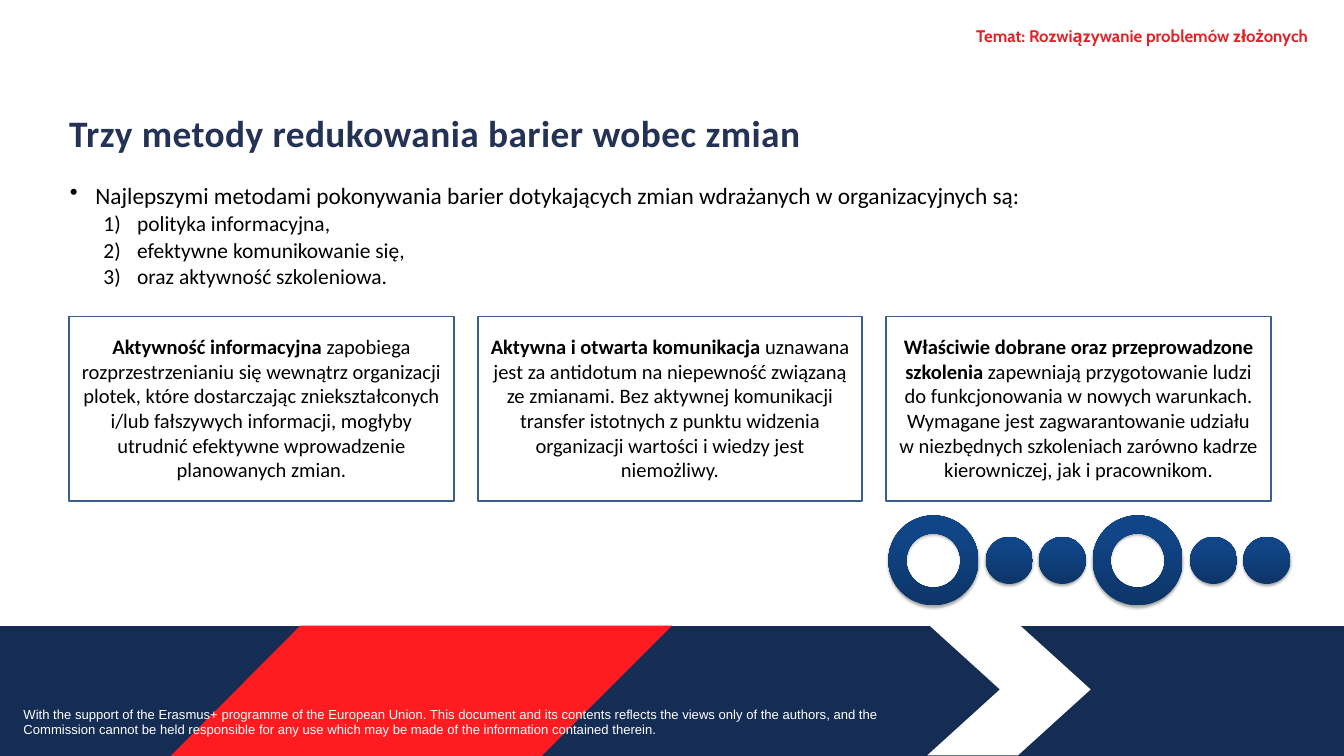
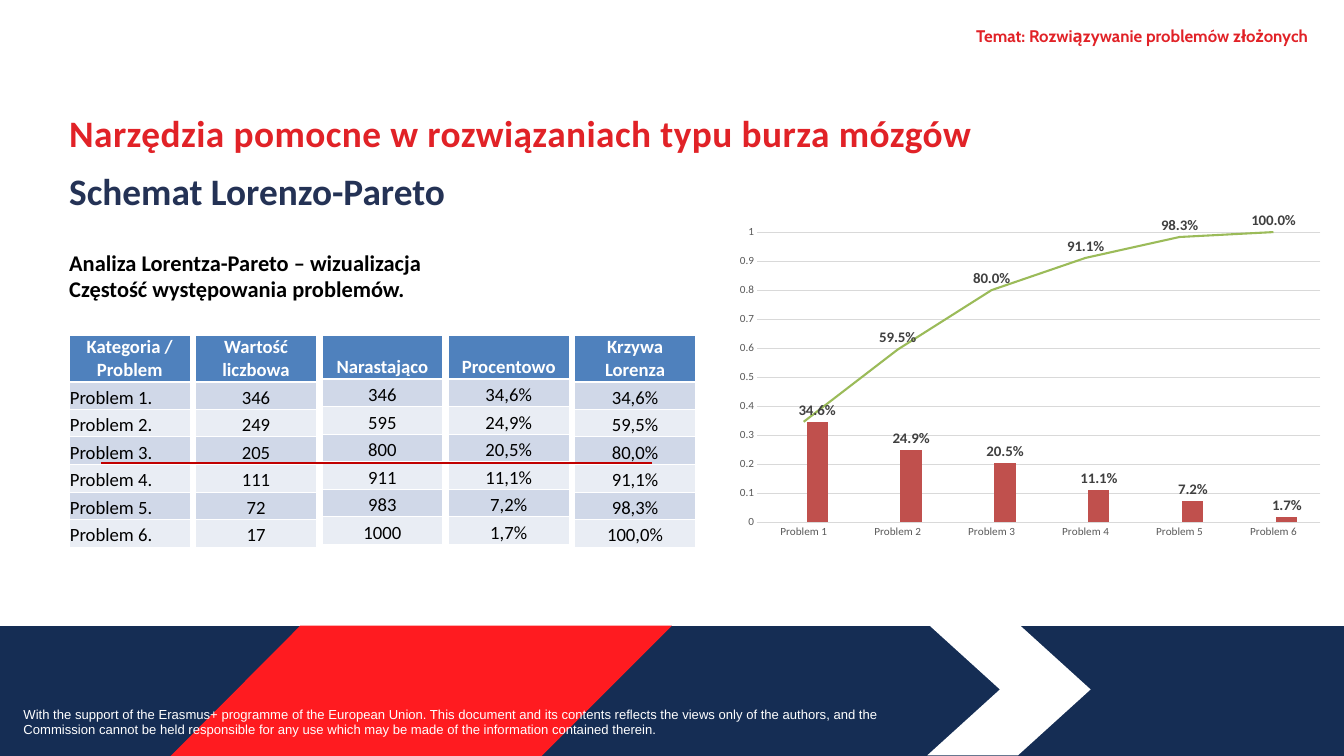
from copy import deepcopy

from lxml import etree
from pptx import Presentation
from pptx.chart.data import CategoryChartData
from pptx.dml.color import RGBColor
from pptx.enum.chart import XL_CHART_TYPE, XL_LABEL_POSITION, XL_MARKER_STYLE, XL_TICK_MARK
from pptx.enum.shapes import MSO_CONNECTOR, MSO_SHAPE
from pptx.enum.text import MSO_ANCHOR, MSO_AUTO_SIZE, PP_ALIGN
from pptx.oxml import parse_xml
from pptx.oxml.ns import nsdecls, qn
from pptx.util import Inches, Pt

LEFT, CENTER, RIGHT = PP_ALIGN.LEFT, PP_ALIGN.CENTER, PP_ALIGN.RIGHT
TOP, MIDDLE, BOTTOM = MSO_ANCHOR.TOP, MSO_ANCHOR.MIDDLE, MSO_ANCHOR.BOTTOM
NO_TICKS = XL_TICK_MARK.NONE

WHITE = RGBColor(0xFF, 0xFF, 0xFF)
BLACK = RGBColor(0, 0, 0)
BAND_NAVY = RGBColor(0x15, 0x2D, 0x54)
BAND_RED = RGBColor(0xFF, 0x1B, 0x20)
TITLE_NAVY = RGBColor(0x24, 0x32, 0x55)
TITLE_RED = RGBColor(0xE1, 0x22, 0x27)
BOX_LINE = RGBColor(0x3A, 0x5F, 0x8C)
BEAD_DARK = RGBColor(0x0D, 0x35, 0x68)
BEAD_LIGHT = RGBColor(0x10, 0x45, 0x87)
HEADER_BLUE = RGBColor(0x4F, 0x81, 0xBD)
ROW_FILLS = (RGBColor(0xD0, 0xD8, 0xE8), RGBColor(0xE9, 0xED, 0xF4))
CUT_RED = RGBColor(0xC0, 0, 0)
BAR_RED = RGBColor(0xC0, 0x50, 0x4D)
CURVE_GREEN = RGBColor(0x9B, 0xBB, 0x59)
GRID_GREY = RGBColor(0xD9, 0xD9, 0xD9)
AXIS_GREY = RGBColor(0x59, 0x59, 0x59)
LABEL_GREY = RGBColor(0x40, 0x40, 0x40)

MARGIN = 1.03
TOPIC = "Temat: Rozwiązywanie problemów złożonych "
DISCLAIMER = (
    "With the support of the Erasmus+ programme of the European Union. This document and its "
    "contents reflects the views only of the authors, and the Commission cannot be held "
    "responsible for any use which may be made of the information contained therein."
)
BANDS = (
    (BAND_NAVY, ((0, 9.31), (20, 9.31), (20, 11.25), (0, 11.25))),
    (WHITE, ((13.8, 9.28), (15.15, 9.28), (16.23, 10.26), (15.15, 11.24),
             (13.8, 11.24), (14.88, 10.26))),
    (BAND_RED, ((4.47, 9.31), (10, 9.31), (8.06, 11.25), (2.54, 11.25))),
)
METHODS = (
    ("Aktywność informacyjna ",
     "zapobiega rozprzestrzenianiu się wewnątrz organizacji plotek, które dostarczając "
     "zniekształconych i/lub fałszywych informacji, mogłyby utrudnić efektywne wprowadzenie "
     "planowanych zmian."),
    ("Aktywna i otwarta komunikacja ",
     "uznawana jest za antidotum na niepewność związaną ze zmianami. Bez aktywnej komunikacji "
     "transfer istotnych z punktu widzenia organizacji wartości i wiedzy jest niemożliwy."),
    ("Właściwie dobrane oraz przeprowadzone szkolenia ",
     "zapewniają przygotowanie ludzi do funkcjonowania w nowych warunkach.\n"
     "Wymagane jest zagwarantowanie udziału\n"
     "w niezbędnych szkoleniach zarówno kadrze kierowniczej, jak i pracownikom."),
)
PARETO_COLUMNS = (
    ("Kategoria / Problem", [f"Problem {number}." for number in range(1, 7)]),
    ("Wartość liczbowa", ["346", "249", "205", "111", "72", "17"]),
    ("Narastająco", ["346", "595", "800", "911", "983", "1000"]),
    ("Procentowo", ["34,6%", "24,9%", "20,5%", "11,1%", "7,2%", "1,7%"]),
    ("Krzywa Lorenza", ["34,6%", "59,5%", "80,0%", "91,1%", "98,3%", "100,0%"]),
)
SHARES = (0.346, 0.249, 0.205, 0.111, 0.072, 0.017)
LORENZ_CURVE = (0.346, 0.595, 0.8, 0.911, 0.983, 1)


def set_values(target, values):
    for name, value in values.items():
        setattr(target, name, value)


def set_font(font, size, color, bold=False, name="Calibri"):
    set_values(font, {"size": Pt(size), "bold": bold, "name": name})
    font.color.rgb = color


def set_line(line, color, width):
    line.color.rgb = color
    line.width = Pt(width)


def set_frame(frame, anchor=TOP, margins=(0, 0, 0, 0)):
    """Margins are left, top, right and bottom, in inches."""
    set_values(frame, {"word_wrap": True, "auto_size": MSO_AUTO_SIZE.NONE,
                       "vertical_anchor": anchor})
    for side, margin in zip(("left", "top", "right", "bottom"), margins):
        setattr(frame, f"margin_{side}", Inches(margin))


def add_run(paragraph, text, *font):
    """Add the text as runs, with a line break at each newline."""
    for number, line in enumerate(text.split("\n")):
        if number:
            paragraph.add_line_break()
        run = paragraph.add_run()
        run.text = line
        set_font(run.font, *font)


def next_paragraph(frame):
    first = frame.paragraphs[0]
    return frame.add_paragraph() if first.runs else first


def add_text(slide, place, lines, *font, align=LEFT, margins=(0, 0, 0, 0)):
    frame = slide.shapes.add_textbox(*map(Inches, place)).text_frame
    set_frame(frame, margins=margins)
    for line in lines:
        paragraph = next_paragraph(frame)
        paragraph.alignment = align
        add_run(paragraph, line, *font)
    return frame


def add_bands(layout, slide):
    """Draw the bottom bands and hand them over to the shared layout."""
    for color, points in BANDS:
        corners = [(Inches(x), Inches(y)) for x, y in points]
        builder = slide.shapes.build_freeform(*corners[0], scale=1)
        builder.add_line_segments(corners[1:], close=True)
        band = builder.convert_to_shape()
        band.shadow.inherit = False
        band.fill.solid()
        band.fill.fore_color.rgb = color
        band.line.fill.background()
        layout.shapes.element.append(band.element)


def add_titled_slide(presentation, layout, titles):
    slide = presentation.slides.add_slide(layout)
    title = slide.shapes.title
    set_values(title, {"left": Inches(MARGIN), "top": Inches(1.62), "width": Inches(18.14),
                       "height": Inches(0.75 if len(titles) == 1 else 1.65)})
    frame = title.text_frame
    set_frame(frame, margins=(0, 0.02, 0, 0))
    for text, color in titles:
        paragraph = next_paragraph(frame)
        set_values(paragraph, {"alignment": LEFT, "space_before": Pt(14)})
        add_run(paragraph, text, 40, color, True)
    first = frame.paragraphs[0]
    first.space_before = Pt(1.1)
    first.runs[0]._r.get_or_add_rPr().set("spc", "50")
    add_text(slide, (0.25, 10.46, 13.75, 0.57), [DISCLAIMER], 14, WHITE, False, "Arial",
             margins=(0.1, 0.05, 0.1, 0.05))
    add_text(slide, (9, 0.37, 10.52, 0.32), [TOPIC], 18, TITLE_RED, True, "Cabin",
             align=RIGHT, margins=(0, 0.01, 0, 0))
    return slide


def add_bullet(paragraph, margin, hang, tag, **attributes):
    properties = paragraph._p.get_or_add_pPr()
    properties.set("marL", str(Inches(margin)))
    properties.set("indent", str(-Inches(hang)))
    etree.SubElement(properties, qn(tag), attributes)


def add_method_list(slide):
    frame = add_text(slide, (MARGIN, 2.69, 15.81, 1.75), [
        "Najlepszymi metodami pokonywania barier dotykających zmian wdrażanych "
        "w organizacyjnych są:"], 25, BLACK)
    add_bullet(frame.paragraphs[0], 0.39, 0.38, "a:buChar", char="•")
    for method in ("polityka informacyjna,", "efektywne komunikowanie się,",
                   "oraz aktywność szkoleniowa."):
        paragraph = frame.add_paragraph()
        set_values(paragraph, {"level": 1, "space_before": Pt(1.1)})
        add_run(paragraph, method, 23, BLACK)
        add_bullet(paragraph, 1.01, 0.5, "a:buAutoNum", type="arabicParenR")


def add_method_box(slide, left, heading, description):
    box = slide.shapes.add_shape(MSO_SHAPE.FLOWCHART_PROCESS,
                                 *map(Inches, (left, 4.71, 5.72, 2.75)))
    box.shadow.inherit = False
    box.fill.background()
    set_line(box.line, BOX_LINE, 2)
    set_frame(box.text_frame, TOP, (0.1, 0.26, 0.1, 0.05))
    paragraph = box.text_frame.paragraphs[0]
    paragraph.alignment = CENTER
    add_run(paragraph, heading, 22, BLACK, True)
    add_run(paragraph, description, 22, BLACK)


def add_bead(group, kind, left, top, size):
    bead = group.shapes.add_shape(kind, *map(Inches, (left, top, size, size)))
    if kind == MSO_SHAPE.DONUT:
        bead.adjustments[0] = 0.2
    bead.line.fill.background()
    bead.fill.gradient()
    bead.fill.gradient_angle = 90
    for stop, color, position in zip(bead.fill.gradient_stops, (BEAD_DARK, BEAD_LIGHT), (0, 0.8)):
        stop.color.rgb = color
        stop.position = position
    bead.shadow.inherit = False
    bead.element.spPr.find(qn("a:effectLst")).append(parse_xml(
        f'<a:outerShdw {nsdecls("a")} blurRad="{Pt(3.1)}" dist="{Pt(1.8)}" dir="5400000" '
        'rotWithShape="0"><a:srgbClr val="000000"><a:alpha val="35000"/></a:srgbClr>'
        '</a:outerShdw>'))


def add_bead_chain(slide):
    group = slide.shapes.add_group_shape()
    for left in (13.22, 16.26):
        add_bead(group, MSO_SHAPE.DONUT, left, 7.67, 1.34)
        for offset in (1.45, 2.24):
            add_bead(group, MSO_SHAPE.OVAL, left + offset, 7.99, 0.7)


def add_cell_borders(cell, bottom_width):
    properties = cell._tc.get_or_add_tcPr()
    for side, width in (("L", 1), ("R", 1), ("T", 1), ("B", bottom_width)):
        properties.append(parse_xml(
            f'<a:ln{side} {nsdecls("a")} w="{Pt(width)}"><a:solidFill>'
            f'<a:srgbClr val="{WHITE}"/></a:solidFill></a:ln{side}>'))


def fill_cell(cell, text, fill, color, is_header, align, anchor):
    add_cell_borders(cell, 3 if is_header else 1)
    cell.fill.solid()
    cell.fill.fore_color.rgb = fill
    set_values(cell, {"vertical_anchor": anchor, "margin_left": Inches(0.01),
                      "margin_right": Inches(0.01), "margin_top": Inches(0.01),
                      "margin_bottom": 0})
    paragraph = cell.text_frame.paragraphs[0]
    paragraph.alignment = align
    add_run(paragraph, text, 20, color, is_header)


def add_column_table(slide, left, header, values, align):
    frame = slide.shapes.add_table(len(values) + 1, 1, *map(Inches, (left, 4.99, 1.8, 3.11)))
    table = frame.table
    table.horz_banding = False
    for number, row in enumerate(table.rows):
        row.height = Inches(0.41 if number else 0.65)
    header_anchor = MIDDLE if " " in header else BOTTOM
    fill_cell(table.cell(0, 0), header, HEADER_BLUE, WHITE, True, CENTER, header_anchor)
    for number, value in enumerate(values):
        fill_cell(table.cell(number + 1, 0), value, ROW_FILLS[number % 2], BLACK, False,
                  align, BOTTOM)


def add_cut_line(slide):
    line = slide.shapes.add_connector(MSO_CONNECTOR.STRAIGHT,
                                      *map(Inches, (1.51, 6.89, 9.7, 6.89)))
    set_line(line.line, CUT_RED, 2.25)
    etree.SubElement(line.element.spPr, qn("a:effectLst"))


def move_last_series_to_line(chart):
    bars = chart.element.find(".//" + qn("c:barChart"))
    series = bars.findall(qn("c:ser"))[-1]
    for bar_setting in series.findall(qn("c:invertIfNegative")):
        series.remove(bar_setting)
    lines = parse_xml(f'<c:lineChart {nsdecls("c")}><c:grouping val="standard"/>'
                      '<c:varyColors val="0"/></c:lineChart>')
    lines.append(series)
    etree.SubElement(lines, qn("c:marker"), val="1")
    lines.extend([deepcopy(axis) for axis in bars.findall(qn("c:axId"))])
    bars.addnext(lines)
    return series


def show_percentages(series, position):
    labels = series.data_labels
    set_values(labels, {"show_value": True, "number_format": "0.0%",
                        "number_format_is_linked": False, "position": position})
    set_font(labels.font, 16, LABEL_GREY, True)


def add_pareto_chart(slide):
    data = CategoryChartData()
    data.categories = [f"Problem {number}" for number in range(1, 7)]
    for number, values in enumerate(([None] * 6, SHARES, LORENZ_CURVE), 1):
        data.add_series(f"Series {number}", values)
    chart = slide.shapes.add_chart(XL_CHART_TYPE.COLUMN_CLUSTERED,
                                   *map(Inches, (10.83, 3.15, 9, 4.95)), data).chart
    set_values(chart, {"has_legend": False, "has_title": False})
    set_font(chart.font, 10, BLACK)
    curve_xml = move_last_series_to_line(chart)
    bars, lines = chart.plots
    set_values(bars, {"gap_width": 219, "overlap": -27, "vary_by_categories": False})

    for series, color in zip(bars.series, (HEADER_BLUE, BAR_RED)):
        series.format.fill.solid()
        series.format.fill.fore_color.rgb = color
    show_percentages(bars.series[1], XL_LABEL_POSITION.OUTSIDE_END)

    curve = lines.series[0]
    curve.smooth = False
    curve.marker.style = XL_MARKER_STYLE.NONE
    set_line(curve.format.line, CURVE_GREEN, 2.25)
    show_percentages(curve, XL_LABEL_POSITION.ABOVE)
    curve_xml.find(qn("c:dLbls")).insert(0, parse_xml(
        f'<c:dLbl {nsdecls("c")}><c:idx val="0"/><c:delete val="1"/></c:dLbl>'))

    for axis in (chart.category_axis, chart.value_axis):
        set_values(axis, {"major_tick_mark": NO_TICKS, "minor_tick_mark": NO_TICKS})
        set_font(axis.tick_labels.font, 12, AXIS_GREY)
    set_line(chart.category_axis.format.line, GRID_GREY, 0.75)
    set_values(chart.value_axis, {"minimum_scale": 0, "maximum_scale": 1, "major_unit": 0.1})
    chart.value_axis.format.line.fill.background()
    set_line(chart.value_axis.major_gridlines.format.line, GRID_GREY, 0.75)


def main():
    presentation = Presentation()
    presentation.slide_width, presentation.slide_height = Inches(20), Inches(11.25)
    layout = presentation.slide_layouts[5]

    methods = add_titled_slide(presentation, layout, [
        ("Trzy metody redukowania barier wobec zmian", TITLE_NAVY)])
    add_bands(layout, methods)
    add_method_list(methods)
    for number, (heading, description) in enumerate(METHODS):
        add_method_box(methods, MARGIN + 6.08 * number, heading, description)
    add_bead_chain(methods)

    pareto = add_titled_slide(presentation, layout, [
        ("Narzędzia pomocne w rozwiązaniach typu burza mózgów", TITLE_RED),
        ("Schemat Lorenzo-Pareto", TITLE_NAVY)])
    add_text(pareto, (MARGIN, 3.7, 9, 0.85), [
        "Analiza Lorentza-Pareto – wizualizacja", "Częstość występowania problemów."],
        24, BLACK, True)
    for number, (header, values) in enumerate(PARETO_COLUMNS):
        add_column_table(pareto, MARGIN + 1.88 * number, header, values,
                         CENTER if number else LEFT)
    add_cut_line(pareto)
    add_pareto_chart(pareto)
    presentation.save("out.pptx")


if __name__ == "__main__":
    main()
